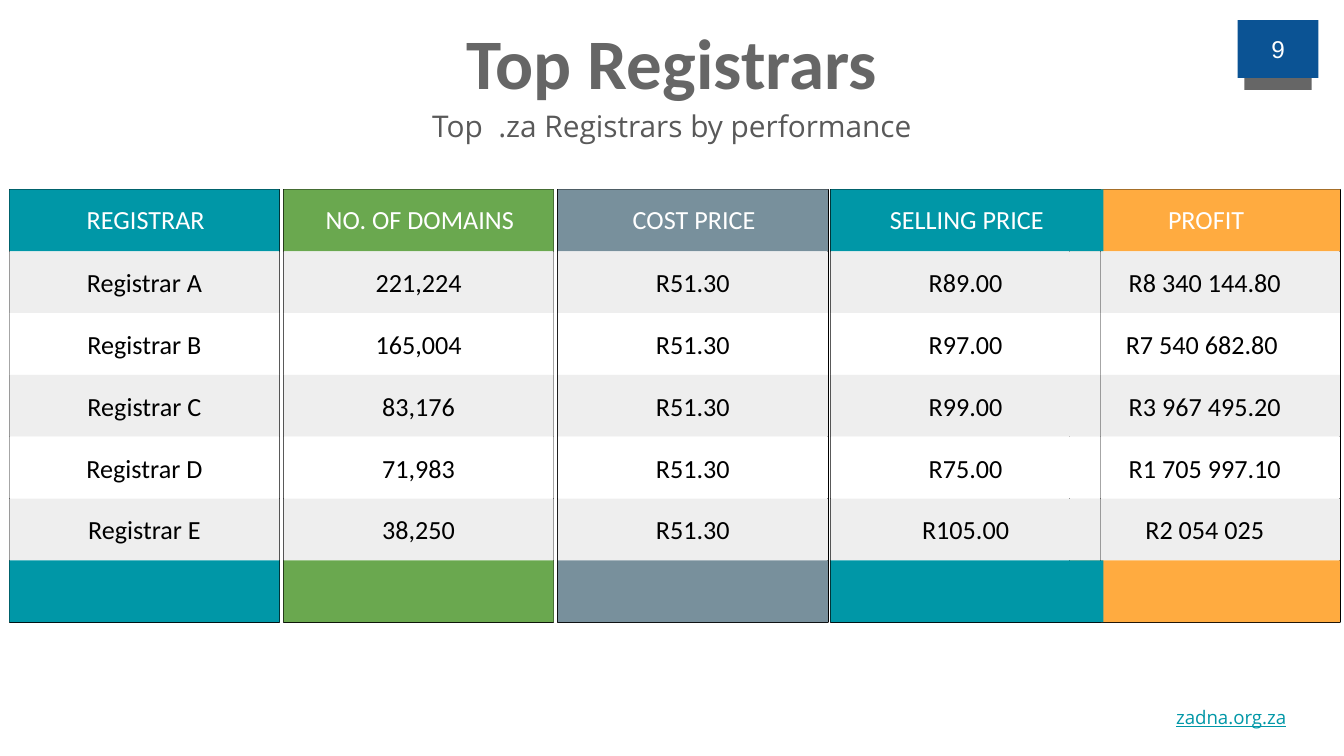
from pptx import Presentation
from pptx.dml.color import RGBColor
from pptx.enum.shapes import MSO_SHAPE
from pptx.enum.text import MSO_ANCHOR, PP_ALIGN
from pptx.util import Inches, Pt

RECT = MSO_SHAPE.RECTANGLE
CENTER = PP_ALIGN.CENTER
TOP, MIDDLE = MSO_ANCHOR.TOP, MSO_ANCHOR.MIDDLE

TEAL, GREEN, SLATE, ORANGE = "0097A7", "6AA84F", "78909C", "FFAB40"
GRAY, BLUE, WHITE, BLACK = "666666", "0B5394", "FFFFFF", "000000"
BANDS = ["EEEEEE", WHITE]

COL_W, HEADING_W, ROW_H = 2.01, 2.03, 0.46
TABLE_TOP = 1.41

# Left edge, header width, colour, heading, values; the last column overlaps the one before
COLUMNS = [
    (0.07, COL_W, TEAL, "REGISTRAR",
     ["Registrar A", "Registrar B", "Registrar C", "Registrar D", "Registrar E"]),
    (2.11, COL_W, GREEN, "NO. OF DOMAINS",
     ["221,224", "165,004", "83,176", "71,983", "38,250"]),
    (4.15, COL_W, SLATE, "COST PRICE", ["R51.30"] * 5),
    (7.96, COL_W, ORANGE, "PROFIT",
     ["R8 340 144.80", "R7 540 682.80 ", "R3 967 495.20", "R1 705 997.10", "R2 054 025"]),
    (6.18, HEADING_W, TEAL, "SELLING PRICE",
     ["R89.00", "R97.00", "R99.00", "R75.00", "R105.00"]),
]


def color(value):
    return RGBColor.from_string(value)


def write(s, text, size=14, font="Calibri", fill=BLACK, bold=False,
          underline=False, anchor=TOP, line_spacing=None):
    tf = s.text_frame
    tf.word_wrap = True
    tf.vertical_anchor = anchor
    tf.margin_left = tf.margin_right = tf.margin_top = tf.margin_bottom = Inches(0.1)
    p = tf.paragraphs[0]
    p.alignment = CENTER
    if line_spacing:
        p.line_spacing = line_spacing
    r = p.add_run()
    r.text = text
    r.font.size = Pt(size)
    r.font.name = font
    r.font.bold = bold
    r.font.underline = underline
    r.font.color.rgb = color(fill)


def add_rect(shapes, x, y, w, h, fill=None, line=None):
    s = shapes.add_shape(RECT, Inches(x), Inches(y), Inches(w), Inches(h))
    s.shadow.inherit = False
    if fill:
        s.fill.solid()
        s.fill.fore_color.rgb = color(fill)
    else:
        s.fill.background()
    if line:
        s.line.color.rgb = color(line)
        s.line.width = Pt(0.75)
    else:
        s.line.fill.background()
    return s


def add_text(shapes, x, y, w, h, text, **fmt):
    s = shapes.add_textbox(Inches(x), Inches(y), Inches(w), Inches(h))
    write(s, text, **fmt)


def add_heading(slide, x, y, w):
    add_text(slide.shapes, x, y, w, 0.63, "Top Registrars", size=38, fill=GRAY, bold=True)
    add_text(slide.shapes, x + 2.12, y + 0.62, w - 4.24, 0.27,
             "Top  .za Registrars by performance",
             size=16, font="Open Sans", fill="595959", line_spacing=1.15)


def add_page_number(slide, x, y, w, h, number):
    add_rect(slide.shapes, x + 0.05, y + h - 0.01, w - 0.1, 0.1, GRAY)
    badge = add_rect(slide.shapes, x, y, w, h, BLUE)
    write(badge, number, size=13, font="Arial", fill=WHITE, anchor=MIDDLE)


def add_column(slide, x, y, header_w, accent, heading, values):
    shapes = slide.shapes.add_group_shape().shapes
    rows = [y + ROW_H * (i + 1) for i in range(len(values))]
    footer_y = rows[-1] + ROW_H

    # Outline sits behind the cells
    add_rect(shapes, x, y, COL_W, footer_y + ROW_H - y, line=BLACK)

    # Banded rows, then the coloured header and footer
    for i, row_y in enumerate(rows):
        add_rect(shapes, x, row_y, COL_W, ROW_H, BANDS[i % 2])
    for bar_y in (y, footer_y):
        add_rect(shapes, x, bar_y, header_w, ROW_H, accent)

    # Heading and values
    add_text(shapes, x, y, HEADING_W, ROW_H, heading, fill=WHITE)
    for row_y, value in zip(rows, values):
        add_text(shapes, x, row_y, COL_W, ROW_H, value, anchor=MIDDLE)


def main():
    prs = Presentation()
    prs.slide_width = Inches(10)
    prs.slide_height = prs.slide_width * 9 // 16
    slide = prs.slides.add_slide(prs.slide_layouts[6])

    add_text(slide.shapes, 8.42, 5.17, 1.48, 0.33, "zadna.org.za",
             size=10, font="Open Sans", fill=TEAL, underline=True)
    add_page_number(slide, 9.21, 0.15, 0.6, 0.43, "9")
    add_heading(slide, 0.34, 0.04, 9.32)
    for x, header_w, accent, heading, values in COLUMNS:
        add_column(slide, x, TABLE_TOP, header_w, accent, heading, values)

    prs.save("out.pptx")


if __name__ == "__main__":
    main()
